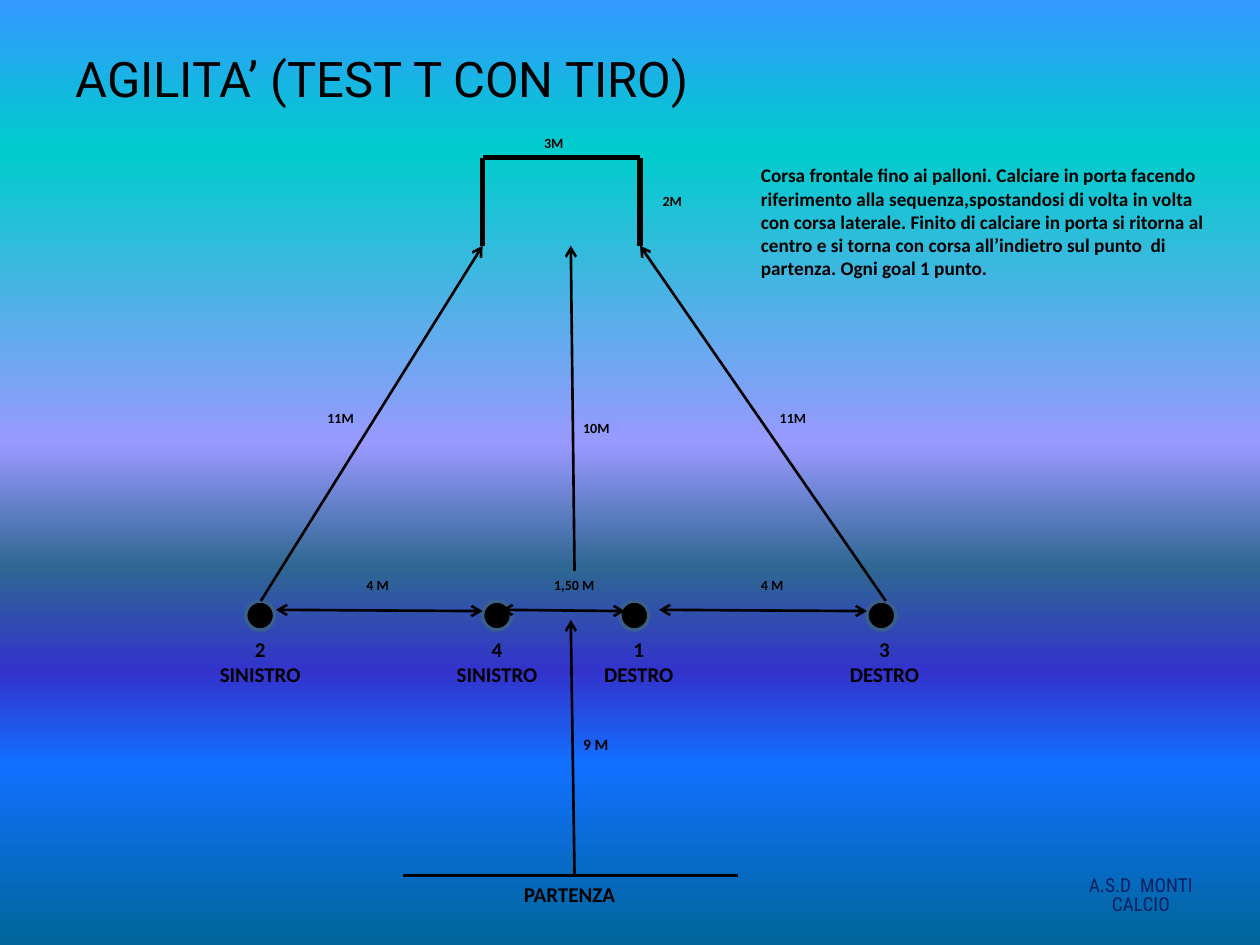
"""Build the agility T-test slide with its pitch diagram."""
from lxml.etree import SubElement
from pptx import Presentation
from pptx.dml.color import RGBColor
from pptx.enum.shapes import MSO_CONNECTOR as Connector, MSO_SHAPE as Shape
from pptx.enum.text import MSO_ANCHOR as Anchor, MSO_AUTO_SIZE as AutoSize, PP_ALIGN as Align
from pptx.oxml.ns import qn
from pptx.util import Inches, Pt

COLORS = {"ink": "000000", "ball_edge": "3A5F8C", "club": "002060"}
SKY = [(0, "3399FF"), (16, "00CCCC"), (47, "9999FF"), (60, "2E6792"),
       (71, "3333CC"), (81, "1170FF"), (100, "006699")]


def add_text(text, left, top, width, height, size=8, font="Calibri", color="ink", bold=True,
             align=Align.LEFT, anchor=Anchor.TOP, wrap=False, spacing=None):
    box = page.shapes.add_textbox(Inches(left), Inches(top), Inches(width), Inches(height))
    frame = box.text_frame
    frame.word_wrap = wrap
    frame.vertical_anchor = anchor
    frame.auto_size = AutoSize.NONE if wrap else AutoSize.SHAPE_TO_FIT_TEXT
    for index, wording in enumerate(text.split("\n")):
        para = frame.add_paragraph() if index else frame.paragraphs[0]
        para.alignment = align
        para.line_spacing = spacing
        span = para.add_run()
        span.text = wording
        span.font.name = font
        span.font.size = Pt(size)
        span.font.bold = bold
        span.font.color.rgb = RGBColor.from_string(COLORS[color])


def add_line(start, end, width=1.5, arrows=()):
    line = page.shapes.add_connector(Connector.STRAIGHT, *map(Inches, start + end))
    line.line.width = Pt(width)
    line.line.color.rgb = RGBColor.from_string(COLORS["ink"])
    properties = line.element.spPr
    for arrow in arrows:
        SubElement(properties.find(qn("a:ln")), qn(f"a:{arrow}"), type="arrow")
    SubElement(properties, qn("a:effectLst"))


deck = Presentation()
deck.slide_width, deck.slide_height = Inches(10), Inches(7.5)
page = deck.slides.add_slide(deck.slide_layouts[6])

background = page.background.fill
background.gradient()
background.gradient_angle = 270
stops = page.element.find(".//" + qn("a:gsLst"))
for stop in list(stops):
    stops.remove(stop)
for percent, shade in SKY:
    stop = SubElement(stops, qn("a:gs"), pos=str(percent * 1000))
    SubElement(stop, qn("a:srgbClr"), val=shade)

add_text("AGILITA’ (TEST T CON TIRO)", 0.5, 0.3, 9, 0.64, size=28, font="Roboto",
         bold=False, anchor=Anchor.MIDDLE, wrap=True)

goal_left, goal_right, goal_top, goal_foot = 3.83, 5.08, 1.25, 1.95
for post in (goal_left, goal_right):
    add_line((post, goal_top), (post, goal_foot), width=3)
add_line((goal_left, goal_top), (goal_right, goal_top), width=3)

ball_top, ball_size = 4.77, 0.23
balls = [("2\nSINISTRO", 1.95, 1.64, 0.85), ("4\nSINISTRO", 3.83, 3.52, 0.85),
         ("1\nDESTRO", 4.92, 4.69, 0.76), ("3\nDESTRO", 6.88, 6.64, 0.76)]
for label, ball_left, label_left, label_width in balls:
    ball = page.shapes.add_shape(Shape.FLOWCHART_CONNECTOR, Inches(ball_left), Inches(ball_top),
                                 Inches(ball_size), Inches(ball_size))
    ball.shadow.inherit = False
    ball.fill.solid()
    ball.fill.fore_color.rgb = RGBColor.from_string(COLORS["ink"])
    ball.line.color.rgb = RGBColor.from_string(COLORS["ball_edge"])
    ball.line.width = Pt(2)
    add_text(label, label_left, 5, label_width, 0.5, size=12, align=Align.CENTER)

for gap_start, gap_end in [(2.19, 3.83), (5.23, 6.88), (3.98, 4.96)]:
    add_line((gap_start, 4.84), (gap_end, 4.85), arrows=("headEnd", "tailEnd"))

start_line = 6.95
shots_and_run = [((2.07, ball_top), (goal_left, goal_foot)), ((4.56, 4.53), (4.53, goal_foot)),
                 ((7.03, ball_top), (goal_right, goal_foot)), ((4.56, start_line), (4.53, 4.92))]
for start, end in shots_and_run:
    add_line(start, end, arrows=("tailEnd",))
add_line((3.2, start_line), (5.86, start_line))

distances = [("3M", 4.22, 1.02, 0.38), ("2M", 5.16, 1.48, 0.38), ("10M", 4.53, 3.28, 0.43),
             ("11M", 2.5, 3.2, 0.43), ("11M", 6.09, 3.2, 0.43), ("4 M", 5.94, 4.53, 0.4),
             ("4 M", 2.81, 4.53, 0.4), ("1,50 M", 4.3, 4.53, 0.54)]
for distance, left, top, width in distances:
    add_text(distance, left, top, width, 0.24)
add_text("9 M", 4.53, 5.78, 0.42, 0.25, size=9)
add_text("PARTENZA", 4.06, start_line, 0.95, 0.3, size=12)

add_text("Corsa frontale fino ai palloni. Calciare in porta facendo riferimento alla "
         "sequenza,spostandosi di volta in volta con corsa laterale. Finito di calciare in porta "
         "si ritorna al centro e si torna con corsa all’indietro sul punto  di partenza. "
         "Ogni goal 1 punto.", 5.94, 1.25, 3.75, 1.03, size=11, wrap=True)
add_text("A.S.D  MONTI CALCIO", 8.36, 6.88, 1.39, 0.47, size=11, font="Roboto Condensed",
         color="club", bold=False, align=Align.CENTER, anchor=Anchor.MIDDLE, wrap=True, spacing=0.8)

deck.save("out.pptx")
